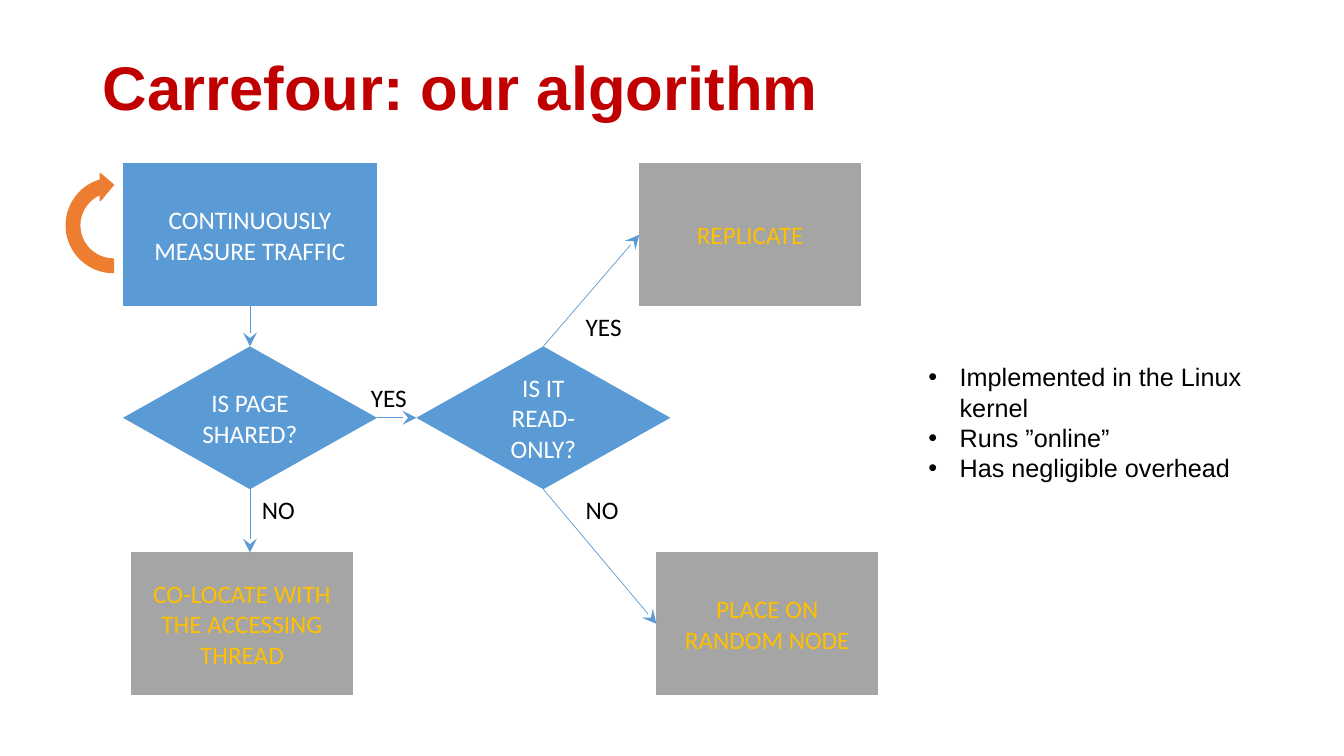
"""Build the Carrefour algorithm flowchart slide."""
from dataclasses import dataclass

from lxml.etree import SubElement
from pptx import Presentation
from pptx.dml.color import RGBColor
from pptx.enum.shapes import MSO_CONNECTOR as Connector, MSO_SHAPE as Preset
from pptx.enum.text import MSO_ANCHOR as Anchor, MSO_AUTO_SIZE as AutoSize, PP_ALIGN as Align
from pptx.oxml.ns import qn
from pptx.util import Inches, Pt

BLUE = RGBColor(0x5B, 0x9B, 0xD5)
GRAY = RGBColor(0xA5, 0xA5, 0xA5)
ORANGE = RGBColor(0xED, 0x7D, 0x31)
GOLD = RGBColor(0xFF, 0xC0, 0x00)
RED = RGBColor(0xC0, 0x00, 0x00)
BLACK = RGBColor(0x00, 0x00, 0x00)
WHITE = RGBColor(0xFF, 0xFF, 0xFF)

WIDTH, HEIGHT = Inches(13.33), Inches(7.5)
TOP_ROW, DECISION_ROW, BOTTOM_ROW = 31.07, 55.27, 82.53
NODE_HEIGHT = 18.9
STEP_WIDTH, OUTCOME_WIDTH = 18.9, 16.5
FIRST_COLUMN, SECOND_COLUMN = 18.6, 40.43
TOP_SITE, BOTTOM_SITE, RIGHT_SITE = 0, 2, 3


@dataclass(frozen=True)
class Node:
    """A flowchart box, centred at shares of the slide in percent."""
    text: str
    center_x: float
    center_y: float
    preset: Preset = Preset.FLOWCHART_PROCESS
    outcome: bool = False


@dataclass(frozen=True)
class Arrow:
    """An arrow from a site of a node to a point in percent."""
    source: Node
    site: int
    end_x: float
    end_y: float


@dataclass(frozen=True)
class Label:
    """An answer beside an arrow, placed in percent."""
    text: str
    left: float
    top: float


MEASURE = Node("CONTINUOUSLY MEASURE TRAFFIC", FIRST_COLUMN, TOP_ROW)
SHARED = Node("IS PAGE SHARED?", FIRST_COLUMN, DECISION_ROW, Preset.FLOWCHART_DECISION)
READ_ONLY = Node("IS IT READ-ONLY?", SECOND_COLUMN, DECISION_ROW, Preset.FLOWCHART_DECISION)
COLOCATE = Node("CO-LOCATE WITH THE ACCESSING THREAD", 18, BOTTOM_ROW, outcome=True)
REPLICATE = Node("REPLICATE", 55.81, TOP_ROW, outcome=True)
RANDOM = Node("PLACE ON RANDOM NODE", 57.09, BOTTOM_ROW, outcome=True)
NODES = (MEASURE, SHARED, READ_ONLY, COLOCATE, REPLICATE, RANDOM)

ARROWS = (
    Arrow(MEASURE, BOTTOM_SITE, FIRST_COLUMN, DECISION_ROW - NODE_HEIGHT / 2),
    Arrow(SHARED, BOTTOM_SITE, FIRST_COLUMN, BOTTOM_ROW - NODE_HEIGHT / 2),
    Arrow(SHARED, RIGHT_SITE, SECOND_COLUMN - STEP_WIDTH / 2, DECISION_ROW),
    Arrow(READ_ONLY, TOP_SITE, REPLICATE.center_x - OUTCOME_WIDTH / 2, TOP_ROW),
    Arrow(READ_ONLY, BOTTOM_SITE, RANDOM.center_x - OUTCOME_WIDTH / 2, BOTTOM_ROW),
)
LABELS = (
    Label("NO", 18.75, 64.67),
    Label("NO", 42.84, 64.67),
    Label("YES", 42.84, 40.53),
    Label("YES", 26.86, 49.87),
)
BULLETS = ("Implemented in the Linux kernel", "Runs ”online”", "Has negligible overhead")


def across(share: float) -> int:
    """Turn a percentage of the slide width into a length."""
    return round(WIDTH * share / 100)


def down(share: float) -> int:
    """Turn a percentage of the slide height into a length."""
    return round(HEIGHT * share / 100)


def add_text(paragraph, text: str, color: RGBColor, font: str = "Calibri",
             size: int = 18, bold: bool = False) -> None:
    """Add one formatted run to a paragraph."""
    run = paragraph.add_run()
    run.text = text
    run.font.name = font
    run.font.size = Pt(size)
    run.font.bold = bold
    run.font.color.rgb = color


def add_box(slide, left: float, top: float, width: float, height: float):
    """Add a wrapping text box and return its text frame."""
    box = slide.shapes.add_textbox(across(left), down(top), across(width), down(height))
    box.text_frame.word_wrap = True
    return box.text_frame


def draw_node(slide, node: Node):
    """Draw a step, decision or outcome."""
    width = OUTCOME_WIDTH if node.outcome else STEP_WIDTH
    shape = slide.shapes.add_shape(
        node.preset, across(node.center_x - width / 2),
        down(node.center_y - NODE_HEIGHT / 2), across(width), down(NODE_HEIGHT))
    shape.shadow.inherit = False
    shape.fill.solid()
    shape.fill.fore_color.rgb = GRAY if node.outcome else BLUE
    shape.line.fill.background()
    frame = shape.text_frame
    frame.word_wrap = True
    frame.vertical_anchor = Anchor.MIDDLE
    paragraph = frame.paragraphs[0]
    paragraph.alignment = Align.CENTER
    add_text(paragraph, node.text, GOLD if node.outcome else WHITE)
    return shape


def draw_arrow(slide, arrow: Arrow, source) -> None:
    """Draw a thin arrow attached to its source shape."""
    end_x, end_y = across(arrow.end_x), down(arrow.end_y)
    connector = slide.shapes.add_connector(Connector.STRAIGHT, end_x, end_y, end_x, end_y)
    connector.begin_connect(source, arrow.site)
    connector.line.color.rgb = BLUE
    connector.line.width = Pt(0.5)
    SubElement(connector.line._get_or_add_ln(), qn("a:tailEnd"), type="stealth", w="lg", len="lg")
    SubElement(connector._element.spPr, qn("a:effectLst"))


def draw_label(slide, label: Label) -> None:
    """Draw the answer beside an arrow."""
    frame = add_box(slide, label.left, label.top, 5.93, 5.33)
    frame.auto_size = AutoSize.SHAPE_TO_FIT_TEXT
    add_text(frame.paragraphs[0], label.text, BLACK)


def draw_loop(slide) -> None:
    """Draw the circular arrow beside the first step."""
    loop = slide.shapes.add_shape(
        Preset.CIRCULAR_ARROW, across(4.43), down(22.67), Inches(1.07), Inches(1.07))
    loop.rotation = 270
    loop.shadow.inherit = False
    loop.fill.solid()
    loop.fill.fore_color.rgb = ORANGE
    loop.line.color.rgb = ORANGE
    loop.line.width = Pt(1)


def draw_bullets(slide) -> None:
    """Draw the list of properties."""
    frame = add_box(slide, 68.34, 47.2, 26.33, 17.47)
    frame.auto_size = AutoSize.SHAPE_TO_FIT_TEXT
    for index, text in enumerate(BULLETS):
        paragraph = frame.add_paragraph() if index else frame.paragraphs[0]
        properties = paragraph._p.get_or_add_pPr()
        properties.set("marL", str(Inches(0.31)))
        properties.set("indent", str(-Inches(0.31)))
        SubElement(properties, qn("a:buFont"), typeface="Arial")
        SubElement(properties, qn("a:buChar"), char="•")
        add_text(paragraph, text, BLACK, "Arial")


def main() -> None:
    """Assemble and save the slide."""
    presentation = Presentation()
    presentation.slide_width, presentation.slide_height = WIDTH, HEIGHT
    slide = presentation.slides.add_slide(presentation.slide_layouts[6])
    title = add_box(slide, 6.9, 2.27, 86.27, 19.33)
    title.vertical_anchor = Anchor.MIDDLE
    title.paragraphs[0].line_spacing = 0.9
    add_text(title.paragraphs[0], "Carrefour: our algorithm", RED, "Arial", 44, True)
    shapes = {node: draw_node(slide, node) for node in NODES}
    draw_loop(slide)
    for arrow in ARROWS:
        draw_arrow(slide, arrow, shapes[arrow.source])
    for label in LABELS:
        draw_label(slide, label)
    draw_bullets(slide)
    presentation.save("out.pptx")


if __name__ == "__main__":
    main()
